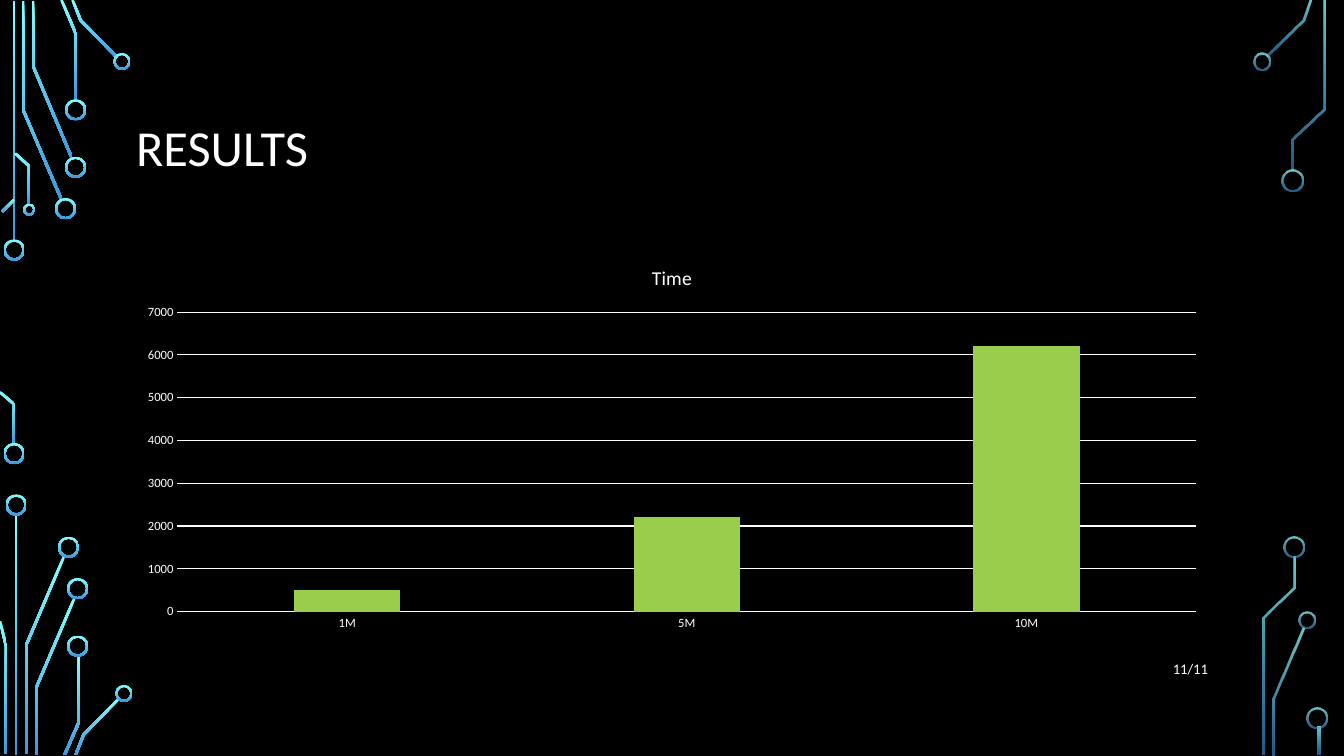
import pptx
import pptx.chart.data
import pptx.dml.color
import pptx.enum.chart
import pptx.enum.shapes
import pptx.enum.text
import pptx.oxml
import pptx.oxml.ns
import pptx.util
from lxml import etree

Inches = pptx.util.Inches
Pt = pptx.util.Pt
RGBColor = pptx.dml.color.RGBColor

BLACK = RGBColor(0x00, 0x00, 0x00)
WHITE = RGBColor(0xFF, 0xFF, 0xFF)
GREEN = RGBColor(0x9A, 0xCD, 0x4C)
CYAN = RGBColor(0x82, 0xFF, 0xFF)
BLUE = RGBColor(0x3D, 0x97, 0xDE)
FONT = "Calibri"

HALF = 0.0125  # half the width of a wire
RIM = 0.02
SOLID = (100, 100)
FADED = (80, 60)

# Centre lines of the circuit wires, in inches
LEFT_WIRES = [
    [(0.14, 0.01), (0.14, 2.4)],
    [(0.23, 0.01), (0.23, 1.09), (0.61, 1.98)],
    [(0.33, 0.01), (0.33, 0.66), (0.71, 1.56)],
    [(0.61, 0), (0.75, 0.33), (0.75, 1)],
    [(0.72, 0), (0.8, 0.2), (1.16, 0.57)],
    [(0.02, 2.1), (0.14, 1.98)],
    [(0, 3.89), (0.14, 4.01), (0.14, 4.41)],
    [(0.15, 1.52), (0.29, 1.65), (0.29, 2.03)],
    [(0.16, 5.1), (0.16, 7.49)],
    [(0.26, 7.48), (0.26, 6.4), (0.64, 5.51)],
    [(0.06, 7.48), (0.06, 6.41), (0, 6.16)],
    [(0.36, 7.49), (0.36, 6.82), (0.74, 5.93)],
    [(0.64, 7.49), (0.78, 7.17), (0.78, 6.5)],
    [(0.75, 7.49), (0.83, 7.29), (1.18, 6.93)],
]
RIGHT_WIRES = [
    [(13, 0), (12.93, 0.2), (12.57, 0.55)],
    [(12.63, 7.49), (12.63, 6.93), (12.93, 6.23)],
    [(13.13, 0.01), (13.13, 1.08), (12.82, 1.38), (12.82, 1.69)],
    [(12.53, 7.49), (12.53, 6.13), (12.84, 5.83), (12.84, 5.52)],
    [(13.08, 7.21), (13.08, 7.49)],
]
# Centre and diameter of the rings at the wire ends
LEFT_RINGS = [
    (0.14, 2.48, 0.21), (0.14, 4.5, 0.21), (0.65, 2.07, 0.21),
    (0.75, 1.66, 0.21), (0.75, 1.09, 0.21), (1.21, 0.61, 0.17),
    (0.29, 2.08, 0.12), (0.16, 5.01, 0.21), (0.68, 5.43, 0.21),
    (0.77, 5.84, 0.21), (0.77, 6.41, 0.21), (1.23, 6.88, 0.17),
]
RIGHT_RINGS = [
    (12.52, 0.61, 0.17), (12.82, 1.79, 0.21), (12.96, 6.15, 0.17),
    (12.83, 5.43, 0.21), (13.06, 7.12, 0.21),
]


def paint(shape, alphas):
    """Fill with the vertical circuit gradient, at the given opacities."""
    shape.shadow.inherit = False
    shape.line.fill.background()
    shape.fill.gradient()
    shape.fill.gradient_angle = 270
    for stop, color in zip(shape.fill.gradient_stops, (CYAN, BLUE)):
        stop.color.rgb = color
    tag = pptx.oxml.ns.qn
    for node, alpha in zip(shape._element.spPr.iter(tag("a:srgbClr")), alphas):
        if alpha < 100:
            etree.SubElement(node, tag("a:alpha")).set("val", str(alpha * 1000))


def outline(route):
    """Return the polygon around a centre line, with mitred corners."""
    pts = [complex(*pt) for pt in route]
    norms = [(b - a) / abs(b - a) * 1j for a, b in zip(pts, pts[1:])]
    joints = zip(pts, norms[:1] + norms, norms + norms[-1:])
    near, far = [], []
    for pt, a, b in joints:
        shift = HALF * (a + b) / (1 + (a * b.conjugate()).real)
        near.append(pt + shift)
        far.append(pt - shift)
    return [(Inches(pt.real), Inches(pt.imag)) for pt in near + far[::-1]]


def add_wire(slide, route, alphas):
    first, *rest = outline(route)
    builder = slide.shapes.build_freeform(*first)
    builder.add_line_segments(rest, close=True)
    paint(builder.convert_to_shape(), alphas)


def add_ring(slide, ring, alphas):
    x, y, size = ring
    shape = slide.shapes.add_shape(
        pptx.enum.shapes.MSO_SHAPE.DONUT, Inches(x - size / 2),
        Inches(y - size / 2), Inches(size), Inches(size))
    shape.adjustments[0] = RIM / size
    paint(shape, alphas)


def style(font, size):
    font.name = FONT
    font.size = Pt(size)
    font.color.rgb = WHITE


def write(shape, text, size, align):
    frame = shape.text_frame
    frame.text = text
    frame.word_wrap = True
    frame.auto_size = pptx.enum.text.MSO_AUTO_SIZE.NONE
    frame.vertical_anchor = pptx.enum.text.MSO_ANCHOR.MIDDLE
    para = frame.paragraphs[0]
    para.alignment = align
    style(para.font, size)
    return para


def add_title(slide, text):
    title = slide.shapes.title
    title.left, title.top = Inches(1.25), Inches(0.68)
    title.width, title.height = Inches(10.83), Inches(1.62)
    para = write(title, text, 36, pptx.enum.text.PP_ALIGN.LEFT)
    para.line_spacing = 0.9


def add_number(slide, text):
    box = slide.shapes.add_textbox(
        Inches(11.24), Inches(6.43), Inches(0.84), Inches(0.4))
    write(box, text, 10.5, pptx.enum.text.PP_ALIGN.RIGHT)


def rule(line):
    line.color.rgb = WHITE
    line.width = Pt(0.75)


def add_bars(slide, name, cats, vals):
    data = pptx.chart.data.CategoryChartData()
    data.categories = cats
    data.add_series(name, vals)
    chart = slide.shapes.add_chart(
        pptx.enum.chart.XL_CHART_TYPE.COLUMN_CLUSTERED, Inches(1.25),
        Inches(2.46), Inches(10.83), Inches(3.87), data).chart
    style(chart.font, 10)
    chart.has_legend = False
    chart.has_title = True
    chart.chart_title.text_frame.text = name
    head = chart.chart_title.text_frame.paragraphs[0].font
    style(head, 14)
    head.bold = False

    for axis in (chart.category_axis, chart.value_axis):
        axis.major_tick_mark = pptx.enum.chart.XL_TICK_MARK.NONE
        axis.minor_tick_mark = pptx.enum.chart.XL_TICK_MARK.NONE
        style(axis.tick_labels.font, 9)
    rule(chart.category_axis.format.line)
    scale = chart.value_axis
    scale.minimum_scale, scale.maximum_scale = 0, 7000
    scale.major_unit = 1000
    scale.format.line.fill.background()
    rule(scale.major_gridlines.format.line)

    plot = chart.plots[0]
    plot.gap_width, plot.overlap = 219, -27
    plot.vary_by_categories = False
    fill = plot.series[0].format.fill
    fill.solid()
    fill.fore_color.rgb = GREEN


def main():
    deck = pptx.Presentation()
    deck.slide_width, deck.slide_height = Inches(13.33), Inches(7.5)
    slide = deck.slides.add_slide(deck.slide_layouts[5])
    slide.background.fill.solid()
    slide.background.fill.fore_color.rgb = BLACK

    for wires, rings, alphas in ((LEFT_WIRES, LEFT_RINGS, SOLID),
                                 (RIGHT_WIRES, RIGHT_RINGS, FADED)):
        for route in wires:
            add_wire(slide, route, alphas)
        for ring in rings:
            add_ring(slide, ring, alphas)
    add_title(slide, "RESULTS")
    add_number(slide, "11/11")
    add_bars(slide, "Time", ("1M", "5M", "10M"), (500, 2200, 6200))
    deck.save("out.pptx")


if __name__ == "__main__":
    main()
